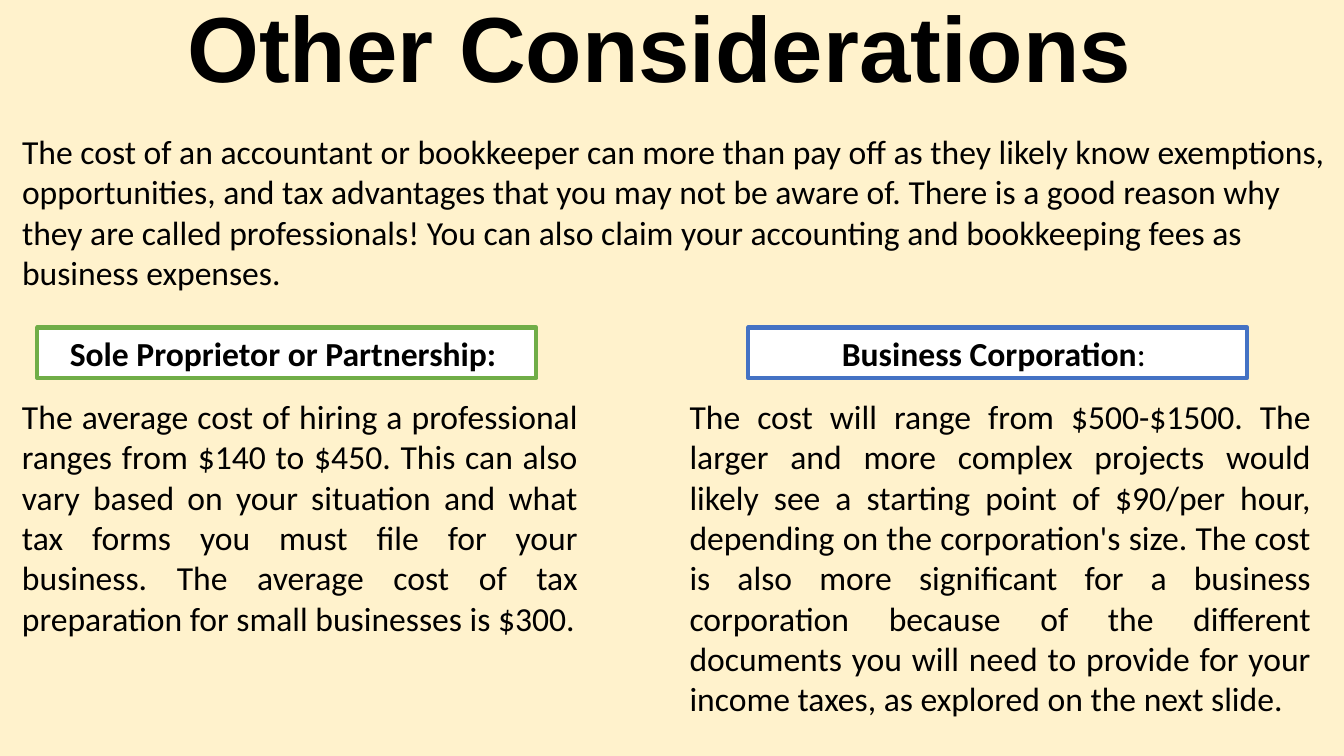
from pptx import Presentation
from pptx.dml.color import RGBColor
from pptx.enum.shapes import MSO_SHAPE
from pptx.enum.text import MSO_ANCHOR, PP_ALIGN
from pptx.util import Inches, Pt


def color(value):
    return RGBColor.from_string(value)


def write(box, text, size, font, align, bold=False):
    box.text_frame.word_wrap = True
    para = box.text_frame.paragraphs[0]
    para.alignment = align
    para.font.size = Pt(size)
    para.font.name = font
    para.font.bold = bold
    para.font.color.rgb = color("000000")
    para.add_run().text = text
    return para


deck = Presentation()
deck.slide_width = Inches(13.33)
deck.slide_height = Inches(7.5)
page = deck.slides.add_slide(deck.slide_layouts[6])
page.background.fill.solid()
page.background.fill.fore_color.rgb = color("FFF2CC")

title = page.shapes.add_textbox(Inches(0.92), Inches(-0.2), Inches(11.5), Inches(1.45))
title.text_frame.vertical_anchor = MSO_ANCHOR.MIDDLE
heading = write(title, "Other Considerations ", 66, "Arial", PP_ALIGN.CENTER, True)
heading.line_spacing = 0.9

intro = (
    "The cost of an accountant or bookkeeper can more than pay off as they likely know "
    "exemptions, opportunities, and tax advantages that you may not be aware of. There is a "
    "good reason why they are called professionals! You can also claim your accounting and "
    "bookkeeping fees as business expenses."
)
sole_cost = (
    "The average cost of hiring a professional ranges from $140 to $450. This can also vary "
    "based on your situation and what tax forms you must file for your business. The average "
    "cost of tax preparation for small businesses is $300."
)
corporation_cost = (
    "The cost will range from $500-$1500. The larger and more complex projects would likely "
    "see a starting point of $90/per hour, depending on the corporation's size. The cost is "
    "also more significant for a business corporation because of the different documents you "
    "will need to provide for your income taxes, as explored on the next slide."
)
passages = [
    (intro, -0.13, 1.25, 13.59, 1.72, PP_ALIGN.LEFT),
    (sole_cost, -0.13, 3.88, 5.96, 2.58, PP_ALIGN.JUSTIFY),
    (corporation_cost, 6.49, 3.88, 6.61, 3.33, PP_ALIGN.JUSTIFY),
]
for text, left, top, width, height, align in passages:
    box = page.shapes.add_textbox(Inches(left), Inches(top), Inches(width), Inches(height))
    para = write(box, text, 24, "Calibri", align)
    para.space_after = Pt(8)
    properties = para._p.get_or_add_pPr()
    properties.set("marL", str(Inches(0.25)))
    properties.set("indent", "0")

labels = [
    ("Sole Proprietor or Partnership: ", "", 0.37, "70AD47"),
    ("Business Corporation", ": ", 7.42, "4472C4"),
]
for text, ending, left, outline in labels:
    label = page.shapes.add_shape(
        MSO_SHAPE.RECTANGLE, Inches(left), Inches(3.25), Inches(4.95), Inches(0.5)
    )
    label.shadow.inherit = False
    label.fill.solid()
    label.fill.fore_color.rgb = color("FFFFFF")
    label.line.color.rgb = color(outline)
    label.line.width = Pt(3)
    label.text_frame.vertical_anchor = MSO_ANCHOR.TOP
    para = write(label, text, 24, "Calibri", PP_ALIGN.CENTER, True)
    if ending:
        span = para.add_run()
        span.text = ending
        span.font.bold = False

for shape in page.shapes:
    for para in shape.text_frame.paragraphs:
        for span in para.runs:
            span.font.size = para.font.size
            span.font.name = para.font.name
            span.font.color.rgb = color("000000")
            if span.font.bold is None:
                span.font.bold = para.font.bold

deck.save("out.pptx")
